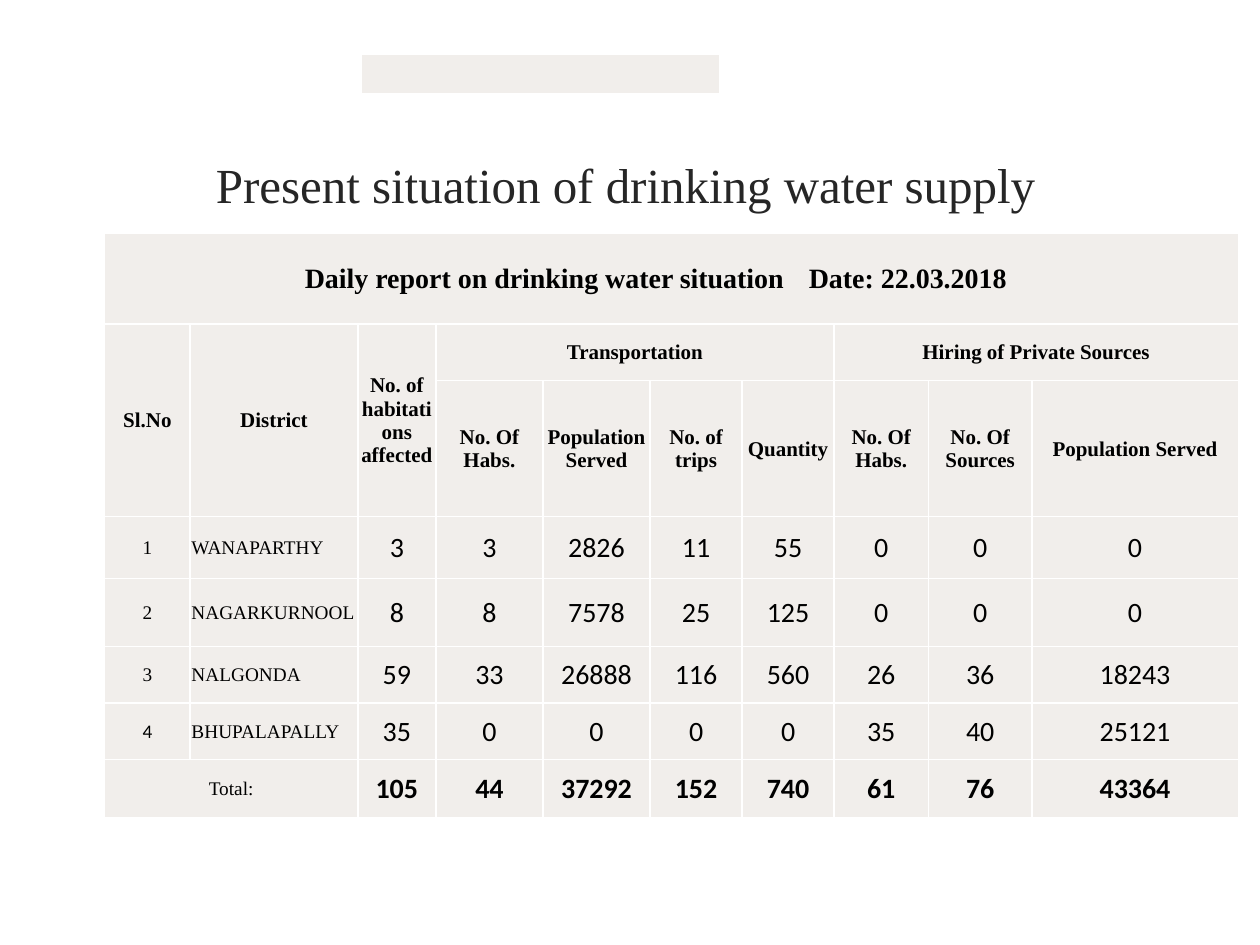
from dataclasses import dataclass
from lxml.etree import SubElement as Sub
from pptx import Presentation
from pptx.dml.color import RGBColor as Rgb
from pptx.enum.text import MSO_ANCHOR as Anchor, PP_ALIGN as Align
from pptx.oxml.ns import qn
from pptx.util import Inches, Pt


@dataclass(frozen=True)
class Theme:
    """Colours, fonts and type sizes."""
    ink: Rgb = Rgb.from_string("000000")
    title: Rgb = Rgb.from_string("262626")
    fill: Rgb = Rgb.from_string("F1EEEB")
    line: str = "FFFFFF"
    serif: str = "Times New Roman"
    sans: str = "Calibri"
    big: int = 28
    body: int = 16
    head: int = 12
    small: int = 11


THEME = Theme()
COLS = [0.68, 1.33, 0.62, 0.85, 0.85, 0.73, 0.73, 0.75, 0.82, 0.98]
ROWS = [0.72, 0.45, 1.08, 0.49, 0.54, 0.45, 0.45, 0.46]
BANNER = "Daily report on drinking water situation\tDate: 22.03.2018"
GROUPS = ["Sl.No", "District", "No. of habitations affected",
          "Transportation", "", "", "", "Hiring of Private Sources", "", ""]
HEADS = ["", "", "", "No. Of Habs.", "Population Served", "No. of trips",
         "Quantity", "No. Of Habs.", "No. Of Sources", "Population Served"]
DATA = [
    ["1", "WANAPARTHY", 3, 3, 2826, 11, 55, 0, 0, 0],
    ["2", "NAGARKURNOOL", 8, 8, 7578, 25, 125, 0, 0, 0],
    ["3", "NALGONDA", 59, 33, 26888, 116, 560, 26, 36, 18243],
    ["4", "BHUPALAPALLY", 35, 0, 0, 0, 0, 35, 40, 25121],
    ["Total:", "", 105, 44, 37292, 152, 740, 61, 76, 43364],
]
SPANS = [(0, 0, 0, 9), (1, 0, 2, 0), (1, 1, 2, 1), (1, 2, 2, 2),
         (1, 3, 1, 6), (1, 7, 1, 9), (7, 0, 7, 1)]


def style(para, size, face=THEME.serif, bold=False, color=THEME.ink,
          align=Align.CENTER):
    """Set the look of a paragraph."""
    para.alignment = align
    font = para.font
    font.size, font.name, font.bold = Pt(size), face, bold
    font.color.rgb = color


def add_title(slide, text):
    """Add the slide title."""
    box = slide.shapes.add_textbox(Inches(0.83), Inches(1.07),
                                   Inches(8.27), Inches(0.78))
    frame = box.text_frame
    frame.word_wrap = True
    frame.vertical_anchor = Anchor.MIDDLE
    frame.text = text
    style(frame.paragraphs[0], THEME.big, color=THEME.title)


def paint(cell):
    """Give a cell its borders, fill and margins."""
    props = cell._tc.get_or_add_tcPr()
    for side in ("a:lnL", "a:lnR", "a:lnT", "a:lnB"):
        line = Sub(props, qn(side), w=str(Pt(1)))
        Sub(Sub(line, qn("a:solidFill")), qn("a:srgbClr"), val=THEME.line)
    cell.fill.solid()
    cell.fill.fore_color.rgb = THEME.fill
    cell.vertical_anchor = Anchor.MIDDLE
    cell.margin_left = cell.margin_right = cell.margin_top = Inches(0.01)
    cell.margin_bottom = 0


def add_grid(slide, left, top, cols, rows):
    """Add a painted table with the given column and row sizes."""
    table = slide.shapes.add_table(
        len(rows), len(cols), Inches(left), Inches(top),
        Inches(sum(cols)), Inches(sum(rows))).table
    table.first_row = table.horz_banding = False
    for col, width in zip(table.columns, cols):
        col.width = Inches(width)
    for row, height in zip(table.rows, rows):
        row.height = Inches(height)
    for cell in table.iter_cells():
        paint(cell)
    return table


def write(cell, text, *args, **kwargs):
    """Put styled text in a cell."""
    cell.text = str(text)
    style(cell.text_frame.paragraphs[0], *args, **kwargs)


def add_banner(cell):
    """Write the report name and date on a tab stop."""
    cell.margin_left = Inches(1.59)
    props = cell.text_frame.paragraphs[0]._p.get_or_add_pPr()
    Sub(Sub(props, qn("a:tabLst")), qn("a:tab"),
        pos=str(Inches(4.47)), algn="l")
    write(cell, BANNER, THEME.body, bold=True, align=Align.LEFT)


def add_report(slide):
    """Add the district report table."""
    table = add_grid(slide, 0.83, 1.85, COLS, ROWS)
    for top, left, end, right in SPANS:
        table.cell(top, left).merge(table.cell(end, right))
    add_banner(table.cell(0, 0))
    for row, names in enumerate([GROUPS, HEADS], 1):
        for col, name in enumerate(names):
            if name:
                write(table.cell(row, col), name, THEME.head, bold=True)
    for row, (num, place, *counts) in enumerate(DATA, 3):
        face = THEME.sans if num == "4" else THEME.serif
        write(table.cell(row, 0), num, THEME.small, face)
        if place:
            write(table.cell(row, 1), place, THEME.small, align=Align.LEFT)
        for col, count in enumerate(counts, 2):
            write(table.cell(row, col), count, THEME.body, THEME.sans,
                  bold=num == "Total:")


def main():
    """Build and save the slide."""
    deck = Presentation()
    deck.slide_width, deck.slide_height = Inches(10), Inches(7.5)
    slide = deck.slides.add_slide(deck.slide_layouts[6])
    add_title(slide, "Present situation of drinking water supply")
    add_report(slide)
    add_grid(slide, 2.87, 0.43, [2.84], [0.3])
    deck.save("out.pptx")


if __name__ == "__main__":
    main()
